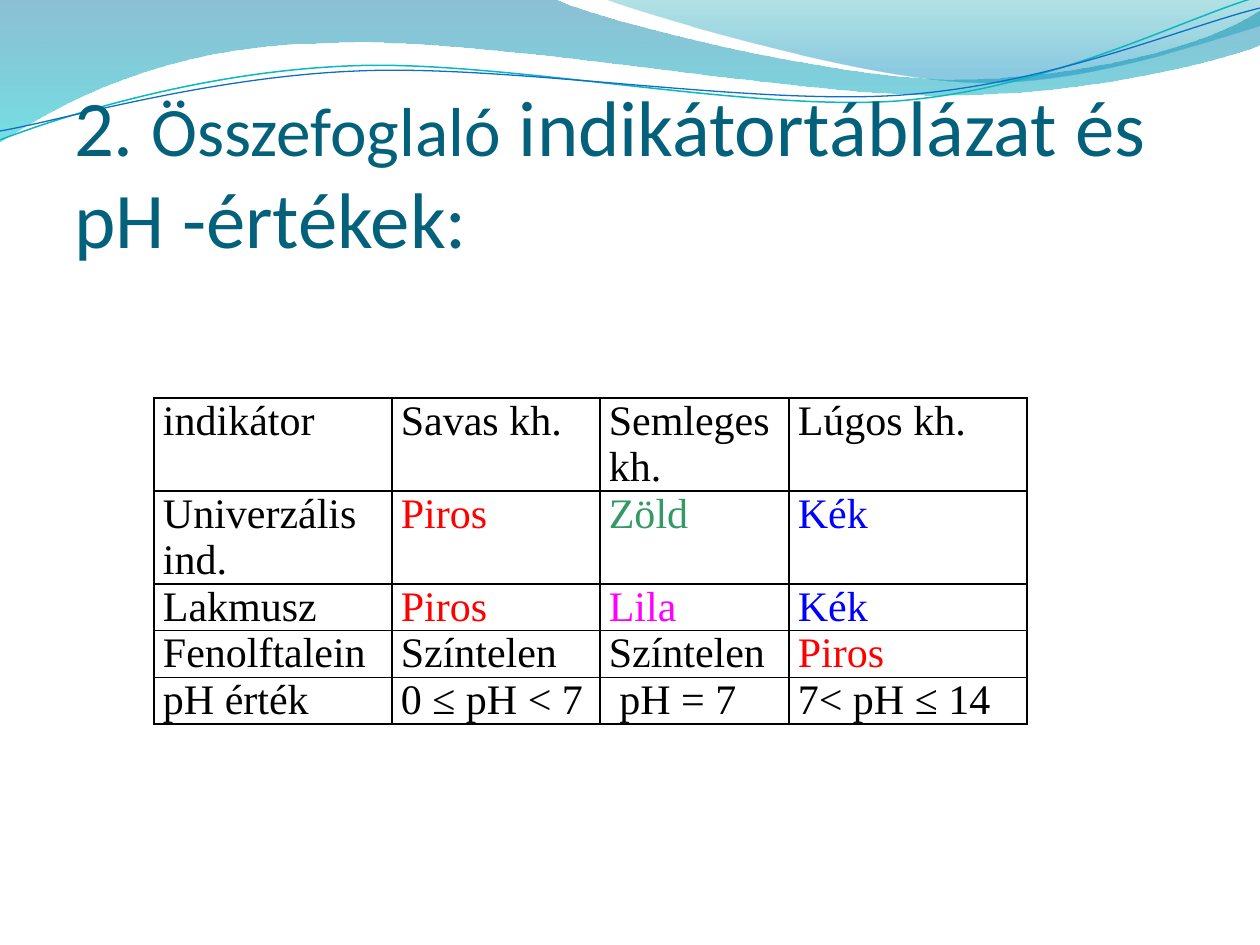
import math

from lxml import etree
from pptx import Presentation
from pptx import util as u
from pptx.dml.color import RGBColor
from pptx.enum import text
from pptx.oxml import ns

PX = 914400 // 126
BLACK, RED, BLUE = "000000", "FF0000", "0000FF"

# Content
TITLE = [("2. ", 45), ("Összefoglaló", 39.6),
         (" indikátortáblázat és pH -értékek:", 45)]
ROWS = [
    ["indikátor", "Savas kh.", "Semleges kh.", "Lúgos kh."],
    ["Univerzális ind.", ("Piros", RED), ("Zöld", "339966"), ("Kék", BLUE)],
    ["Lakmusz", ("Piros", RED), ("Lila", "FF00FF"), ("Kék", BLUE)],
    ["Fenolftalein", "Színtelen", "Színtelen", ("Piros", RED)],
    ["pH érték", "0 ≤ pH < 7", " pH = 7", "7< pH ≤ 14"],
]
COLS = [238, 208, 189, 238]
HIGH = [93, 93, 46, 47, 46]

# Waves: two numbers make a straight step, six a Bezier step
BANDS = [
    ([(0, 0), (554, -1), (600, 21, 837, 79, 955, 79),
      (1075, 79, 1207, 47, 1260, 11), (1261, 45),
      (1239, 55, 1096, 96, 940, 95), (784, 95, 481, 35, 324, 43),
      (163, 45, 58, 105, -1, 142), (0, 0)],
     [("0074A1", 45, 0), ("00C6CF", 55, 1)]),
    ([(604, -1), (641, 14, 859, 78, 969, 82),
      (1079, 87, 1211, 40, 1260, 26), (1260, 0), (604, -1)],
     [("00A1A9", 30, 0), ("008BBF", 45, 0.8)]),
]
TURN = -2.7
LINES = [
    ([(0, 140), (60, 117, 199, 72, 349, 66), (498, 59, 747, 112, 898, 101),
      (1050, 89, 1182, 19, 1257, -3)], (629, 72), "0AB8BF", 0.85),
    ([(0, 131), (59, 121, 207, 77, 357, 71), (508, 64, 752, 106, 903, 95),
      (1053, 84, 1186, 26, 1260, 8)], (629, 74), "0F6FC6", 0.75),
]


def rgb(code):
    return RGBColor.from_string(code)


def spin(steps, mid, turn):
    """Turn all points of the steps about mid."""
    cos, sin = math.cos(math.radians(turn)), math.sin(math.radians(turn))
    out = []
    for step in steps:
        flat = []
        for x, y in zip(step[::2], step[1::2]):
            dx, dy = x - mid[0], y - mid[1]
            flat += [mid[0] + dx * cos - dy * sin, mid[1] + dx * sin + dy * cos]
        out.append(flat)
    return out


def wave(slide, steps, close):
    pts = [(round(x * PX), round(y * PX))
           for step in steps for x, y in zip(step[::2], step[1::2])]
    form = slide.shapes.build_freeform(*pts[0])
    form.add_line_segments(pts[1:], close=close)
    shape = form.convert_to_shape()
    shape.shadow.inherit = False
    # Join each three steps that belong to one Bezier
    legs = iter(shape.element.findall(".//" + ns.qn("a:lnTo")))
    for step in steps[1:]:
        leg = next(legs)
        if len(step) == 6:
            curve = etree.Element(ns.qn("a:cubicBezTo"))
            leg.addprevious(curve)
            for part in (leg, next(legs), next(legs)):
                curve.append(part[0])
                part.getparent().remove(part)
    return shape


def band(slide, steps, stops):
    shape = wave(slide, steps, True)
    shape.line.fill.background()
    shape.fill.gradient()
    shape.fill.gradient_angle = 270
    for stop, (code, _, pos) in zip(shape.fill.gradient_stops, stops):
        stop.color.rgb = rgb(code)
        stop.position = pos
    tints = shape.element.spPr.findall(".//" + ns.qn("a:srgbClr"))
    for tint, (_, alpha, _) in zip(tints, stops):
        etree.SubElement(tint, ns.qn("a:alpha"), val=str(alpha * 1000))


def write(para, words, font, size, code):
    run = para.add_run()
    run.text = words
    run.font.name = font
    run.font.size = u.Pt(size)
    run.font.bold = False
    run.font.color.rgb = rgb(code)


def border(cell, code):
    props = cell._tc.get_or_add_tcPr()
    for side in ("lnL", "lnR", "lnT", "lnB"):
        edge = etree.SubElement(props, ns.qn("a:" + side), w=str(u.Pt(1)))
        fill = etree.SubElement(edge, ns.qn("a:solidFill"))
        etree.SubElement(fill, ns.qn("a:srgbClr"), val=code)


def heading(slide):
    title = slide.shapes.title
    title.left, title.top, title.width, title.height = (
        n * PX for n in (74, 76, 1134, 287))
    frame = title.text_frame
    frame.word_wrap = True
    frame.auto_size = text.MSO_AUTO_SIZE.NONE
    frame.vertical_anchor = text.MSO_ANCHOR.TOP
    frame.margin_left = frame.margin_right = frame.margin_bottom = 0
    frame.margin_top = 6 * PX
    para = frame.paragraphs[0]
    para.alignment = text.PP_ALIGN.LEFT
    para.line_spacing = 0.98
    for words, size in TITLE:
        write(para, words, "Calibri", size, "04617B")


def grid(slide):
    table = slide.shapes.add_table(
        len(ROWS), len(COLS), 154 * PX, 398 * PX,
        sum(COLS) * PX, sum(HIGH) * PX).table
    table.first_row = table.horz_banding = False
    for col, wide in zip(table.columns, COLS):
        col.width = wide * PX
    for row, high, items in zip(table.rows, HIGH, ROWS):
        row.height = high * PX
        for cell, item in zip(row.cells, items):
            words, code = (item, BLACK) if isinstance(item, str) else item
            cell.margin_left = cell.margin_right = 9 * PX
            cell.margin_top = cell.margin_bottom = 0
            border(cell, BLACK)
            cell.fill.background()
            write(cell.text_frame.paragraphs[0], words, "Times New Roman", 24, code)


def main():
    deck = Presentation()
    deck.slide_width, deck.slide_height = u.Inches(10), u.Inches(7.5)
    slide = deck.slides.add_slide(deck.slide_layouts[5])

    # Waves along the top
    for steps, stops in BANDS:
        band(slide, steps, stops)
    for steps, mid, code, width in LINES:
        curve = wave(slide, spin(steps, mid, -TURN), False)
        curve.rotation = TURN
        curve.fill.background()
        curve.line.color.rgb = rgb(code)
        curve.line.width = u.Pt(width)

    # Title in front of the waves, then the table
    heading(slide)
    slide.shapes._spTree.append(slide.shapes.title.element)
    grid(slide)
    deck.save("out.pptx")


if __name__ == "__main__":
    main()
